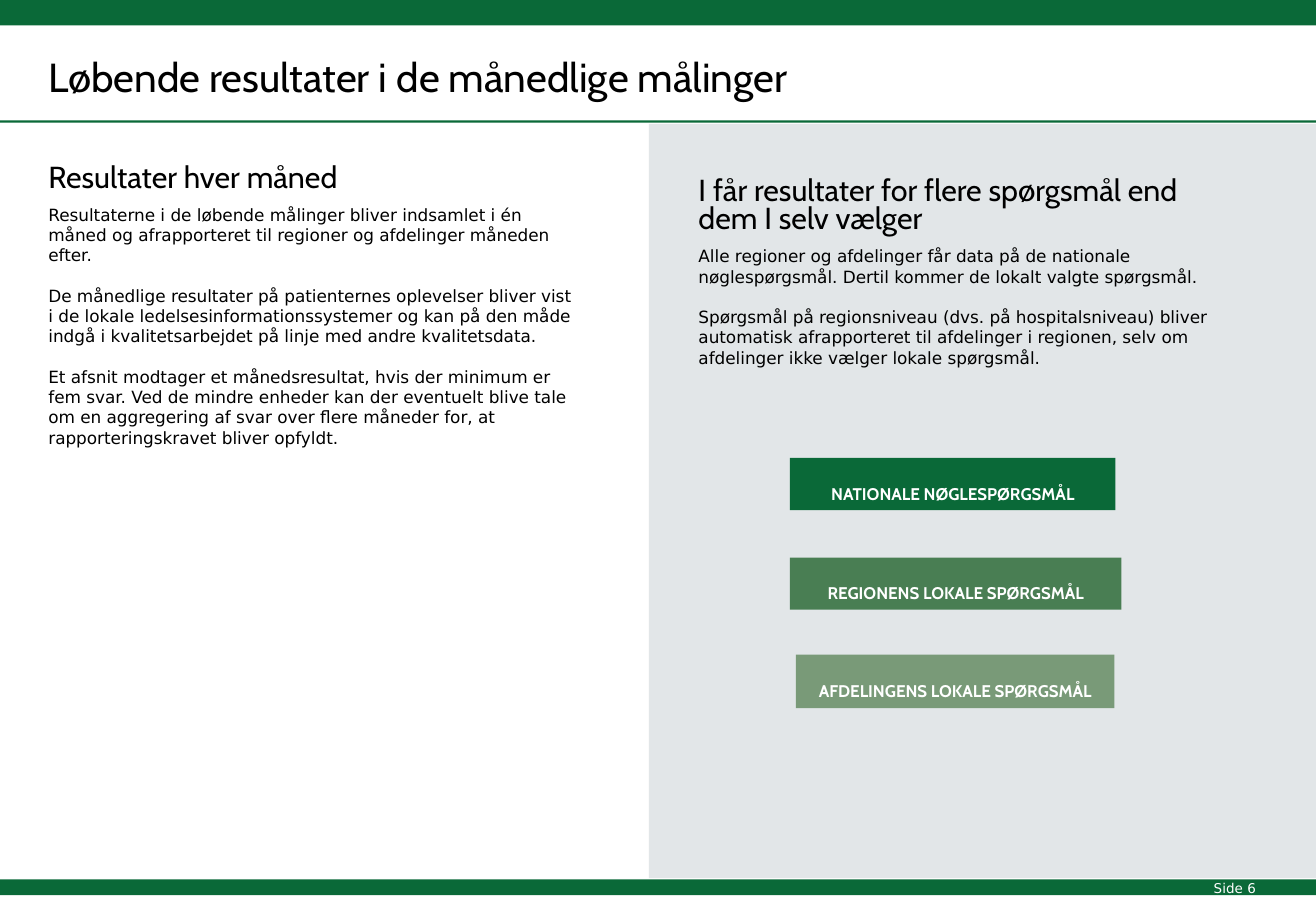
import lxml.etree
import pptx
import pptx.dml.color
import pptx.enum.shapes
import pptx.enum.text
import pptx.oxml.ns
import pptx.util

Inches = pptx.util.Inches
Pt = pptx.util.Pt


class SlideBuilder:
    colors = {
        "green": "0A6938",
        "mid_green": "497E53",
        "light_green": "799A78",
        "slate": "425B67",
        "black": "000000",
        "white": "FFFFFF",
    }
    heading_font = "Cabin"
    body_font = "DejaVu Sans"

    def __init__(self, deck):
        self.page = deck.slides.add_slide(deck.slide_layouts[6])

    def color(self, name):
        return pptx.dml.color.RGBColor.from_string(self.colors[name])

    def style(self, para, font, size, color="black", bold=False):
        for span in para.runs:
            span.font.name = font
            span.font.size = Pt(size)
            span.font.bold = bold
            span.font.color.rgb = self.color(color)

    def rectangle(self, left, top, width, height, fill, opacity=100):
        shape = self.page.shapes.add_shape(
            pptx.enum.shapes.MSO_SHAPE.RECTANGLE,
            Inches(left), Inches(top), Inches(width), Inches(height))
        shape.shadow.inherit = False
        shape.line.fill.background()
        shape.fill.solid()
        shape.fill.fore_color.rgb = self.color(fill)
        if opacity < 100:
            tint = shape.element.spPr.find(".//" + pptx.oxml.ns.qn("a:srgbClr"))
            alpha = lxml.etree.SubElement(tint, pptx.oxml.ns.qn("a:alpha"))
            alpha.set("val", str(opacity * 1000))
        return shape

    def text(self, left, top, width, height, words, font, size, color="black", wrap=True):
        box = self.page.shapes.add_textbox(
            Inches(left), Inches(top), Inches(width), Inches(height))
        box.text_frame.word_wrap = wrap
        box.text_frame.text = words
        self.style(box.text_frame.paragraphs[0], font, size, color)
        return box

    def section(self, left, top, width, height, heading, passages, heading_spacing=None):
        box = self.text(left, top, width, height, heading, self.heading_font, 18)
        title = box.text_frame.paragraphs[0]
        title.space_after = Pt(6)
        if heading_spacing:
            title.line_spacing = Pt(heading_spacing)
        for number, passage in enumerate(passages):
            para = box.text_frame.add_paragraph()
            para.text = passage
            if number < len(passages) - 1:
                para.space_after = Pt(12)
            self.style(para, self.body_font, 10)

    def label(self, left, top, width, height, words, fill):
        shape = self.rectangle(left, top, width, height, fill)
        frame = shape.text_frame
        frame.word_wrap = False
        frame.vertical_anchor = pptx.enum.text.MSO_ANCHOR.TOP
        frame.margin_top = Inches(0.21)
        frame.margin_bottom = 0
        frame.text = words
        para = frame.paragraphs[0]
        para.alignment = pptx.enum.text.PP_ALIGN.CENTER
        self.style(para, self.heading_font, 10, "white", True)


def main():
    deck = pptx.Presentation()
    deck.slide_width = Inches(10.83)
    deck.slide_height = Inches(7.5)
    builder = SlideBuilder(deck)

    for top, height in ((7.24, 0.13), (0, 0.21), (0.99, 0.02)):
        builder.rectangle(0, top, 10.83, height, "green")
    builder.rectangle(5.34, 1.02, 5.49, 6.21, "slate", 15)

    builder.text(0.3, 0.38, 9.13, 0.5, "Løbende resultater i de månedlige målinger",
                 builder.heading_font, 24)
    builder.section(0.3, 1.25, 4.57, 2.71, "Resultater hver måned", [
        "Resultaterne i de løbende målinger bliver indsamlet i én måned og "
        "afrapporteret til regioner og afdelinger måneden efter.",
        "De månedlige resultater på patienternes oplevelser bliver vist i de lokale "
        "ledelsesinformationssystemer og kan på den måde indgå i kvalitetsarbejdet "
        "på linje med andre kvalitetsdata.",
        "Et afsnit modtager et månedsresultat, hvis der minimum er fem svar. Ved de "
        "mindre enheder kan der eventuelt blive tale om en aggregering af svar over "
        "flere måneder for, at rapporteringskravet bliver opfyldt.",
    ])
    builder.section(5.65, 1.42, 4.43, 1.67,
                    "I får resultater for flere spørgsmål end dem I selv vælger", [
        "Alle regioner og afdelinger får data på de nationale nøglespørgsmål. "
        "Dertil kommer de lokalt valgte spørgsmål.",
        "Spørgsmål på regionsniveau (dvs. på hospitalsniveau) bliver automatisk "
        "afrapporteret til afdelinger i regionen, selv om afdelinger ikke vælger "
        "lokale spørgsmål.",
    ], heading_spacing=17)

    builder.label(6.5, 3.77, 2.68, 0.43, "NATIONALE NØGLESPØRGSMÅL", "green")
    builder.label(6.5, 4.59, 2.73, 0.43, "REGIONENS LOKALE SPØRGSMÅL", "mid_green")
    builder.label(6.55, 5.39, 2.62, 0.44, "AFDELINGENS LOKALE SPØRGSMÅL", "light_green")

    builder.text(9.89, 7.2, 0.56, 0.24, "Side 6", builder.body_font, 8, "white", wrap=False)
    deck.save("out.pptx")


if __name__ == "__main__":
    main()
